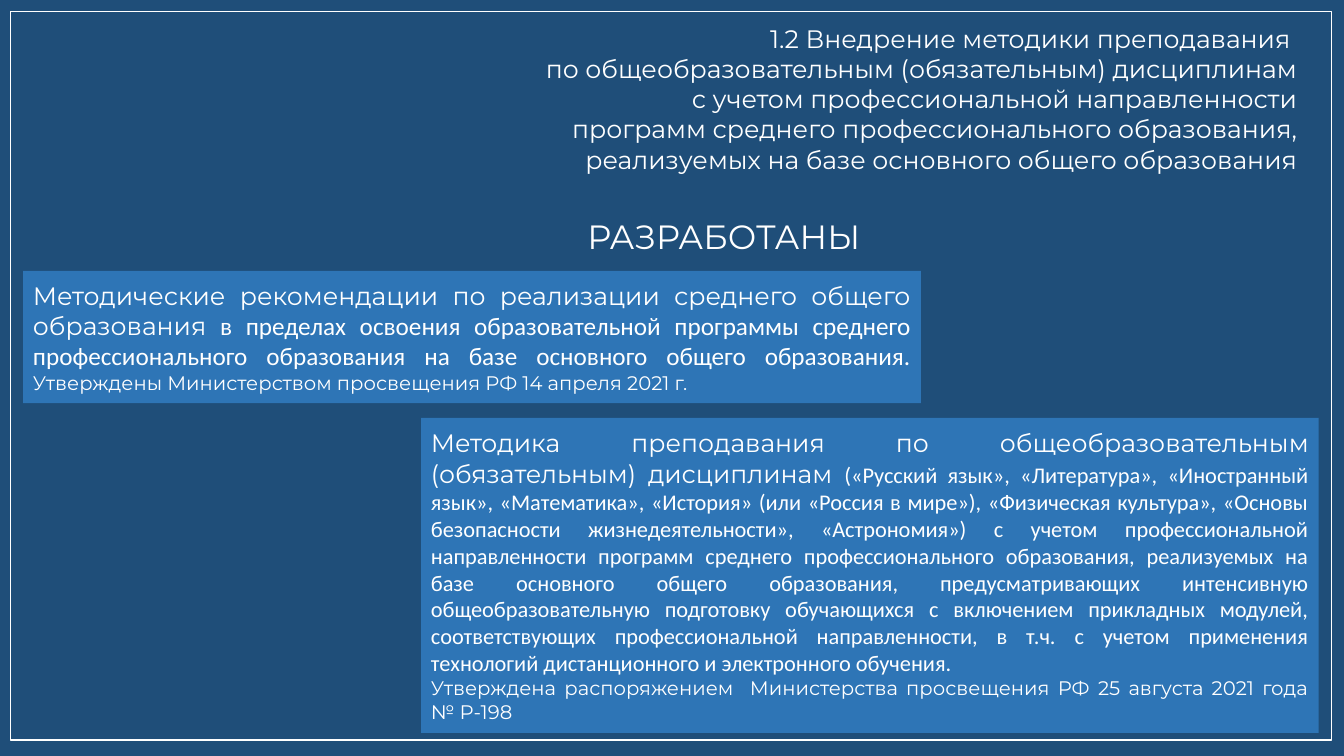
from dataclasses import dataclass

from pptx import Presentation
from pptx.dml.color import RGBColor
from pptx.enum.shapes import MSO_SHAPE
from pptx.enum.text import MSO_ANCHOR, MSO_AUTO_SIZE, PP_ALIGN
from pptx.util import Emu, Pt

EMU_PER_PX = 9525


@dataclass(frozen=True)
class Theme:
    background: RGBColor = RGBColor(0x1F, 0x4E, 0x79)
    panel: RGBColor = RGBColor(0x2E, 0x75, 0xB6)
    light: RGBColor = RGBColor(0xFF, 0xFF, 0xFF)
    display: str = "Montserrat"
    text: str = "Calibri"
    heading: int = 24
    lead: int = 18
    detail: int = 16
    note: int = 14


THEME = Theme()

TITLE_LINES = [
    "1.2 Внедрение методики преподавания ",
    "по общеобразовательным (обязательным) дисциплинам",
    "с учетом профессиональной направленности",
    "программ среднего профессионального образования,",
    "реализуемых на базе основного общего образования",
]

RECOMMENDATIONS = [
    [
        ("Методические рекомендации по реализации среднего общего образования",
         THEME.display, THEME.lead),
        (" в пределах освоения образовательной программы среднего "
         "профессионального образования на базе основного общего образования. ",
         THEME.text, THEME.lead),
        ("Утверждены Министерством просвещения РФ 14 апреля 2021 г.",
         THEME.display, THEME.note),
    ],
]

METHODOLOGY = [
    [
        ("Методика преподавания по общеобразовательным (обязательным) дисциплинам ",
         THEME.display, THEME.lead),
        ("(«Русский язык», «Литература», «Иностранный язык», «Математика», "
         "«История» (или «Россия в мире»), «Физическая культура», «Основы "
         "безопасности жизнедеятельности», «Астрономия») с учетом "
         "профессиональной направленности программ среднего профессионального "
         "образования, реализуемых на базе основного общего образования, "
         "предусматривающих интенсивную общеобразовательную подготовку "
         "обучающихся с включением прикладных модулей, соответствующих "
         "профессиональной направленности, в т.ч. с учетом применения "
         "технологий дистанционного и электронного обучения.",
         THEME.text, THEME.detail),
    ],
    [
        ("Утверждена распоряжением  Министерства просвещения РФ "
         "25 августа 2021 года № Р-198",
         THEME.display, THEME.note),
    ],
]


def px(*lengths):
    return [Emu(length * EMU_PER_PX) for length in lengths]


def write(frame, paragraphs, alignment, anchor=MSO_ANCHOR.TOP, wrap=True):
    frame.word_wrap = wrap
    frame.auto_size = MSO_AUTO_SIZE.NONE
    frame.vertical_anchor = anchor
    for index, passages in enumerate(paragraphs):
        paragraph = frame.paragraphs[0] if index == 0 else frame.add_paragraph()
        paragraph.alignment = alignment
        paragraph.line_spacing = 1.0
        paragraph.space_before = Pt(0)
        for wording, typeface, size in passages:
            run = paragraph.add_run()
            run.text = wording
            run.font.name = typeface
            run.font.size = Pt(size)
            run.font.color.rgb = THEME.light


def set_title(slide, box, lines):
    title = slide.shapes.title
    title.left, title.top, title.width, title.height = px(*box)
    paragraphs = [[(line, THEME.display, THEME.lead)] for line in lines]
    write(title.text_frame, paragraphs, PP_ALIGN.RIGHT)


def add_rectangle(slide, box):
    rectangle = slide.shapes.add_shape(MSO_SHAPE.RECTANGLE, *px(*box))
    rectangle.shadow.inherit = False
    return rectangle


def add_frame(slide, box):
    border = add_rectangle(slide, box)
    border.fill.background()
    border.line.color.rgb = THEME.light
    border.line.width = Pt(1)


def add_panel(slide, box, paragraphs):
    panel = add_rectangle(slide, box)
    panel.fill.solid()
    panel.fill.fore_color.rgb = THEME.panel
    panel.line.fill.background()
    write(panel.text_frame, paragraphs, PP_ALIGN.JUSTIFY, MSO_ANCHOR.MIDDLE)


def add_heading(slide, box, wording):
    heading = slide.shapes.add_textbox(*px(*box))
    write(heading.text_frame, [[(wording, THEME.display, THEME.heading)]],
          PP_ALIGN.LEFT, wrap=False)


def main():
    presentation = Presentation()
    presentation.slide_width, presentation.slide_height = px(1280, 720)
    slide = presentation.slides.add_slide(
        presentation.slide_layouts.get_by_name("Title Only"))
    slide.background.fill.solid()
    slide.background.fill.fore_color.rgb = THEME.background

    set_title(slide, (6, 17, 1239, 156), TITLE_LINES)
    add_frame(slide, (10, 11, 1258, 694))
    add_panel(slide, (22, 258, 855, 126), RECOMMENDATIONS)
    add_panel(slide, (401, 398, 855, 300), METHODOLOGY)
    add_heading(slide, (550, 201, 300, 48), "РАЗРАБОТАНЫ")
    presentation.save("out.pptx")


if __name__ == "__main__":
    main()
